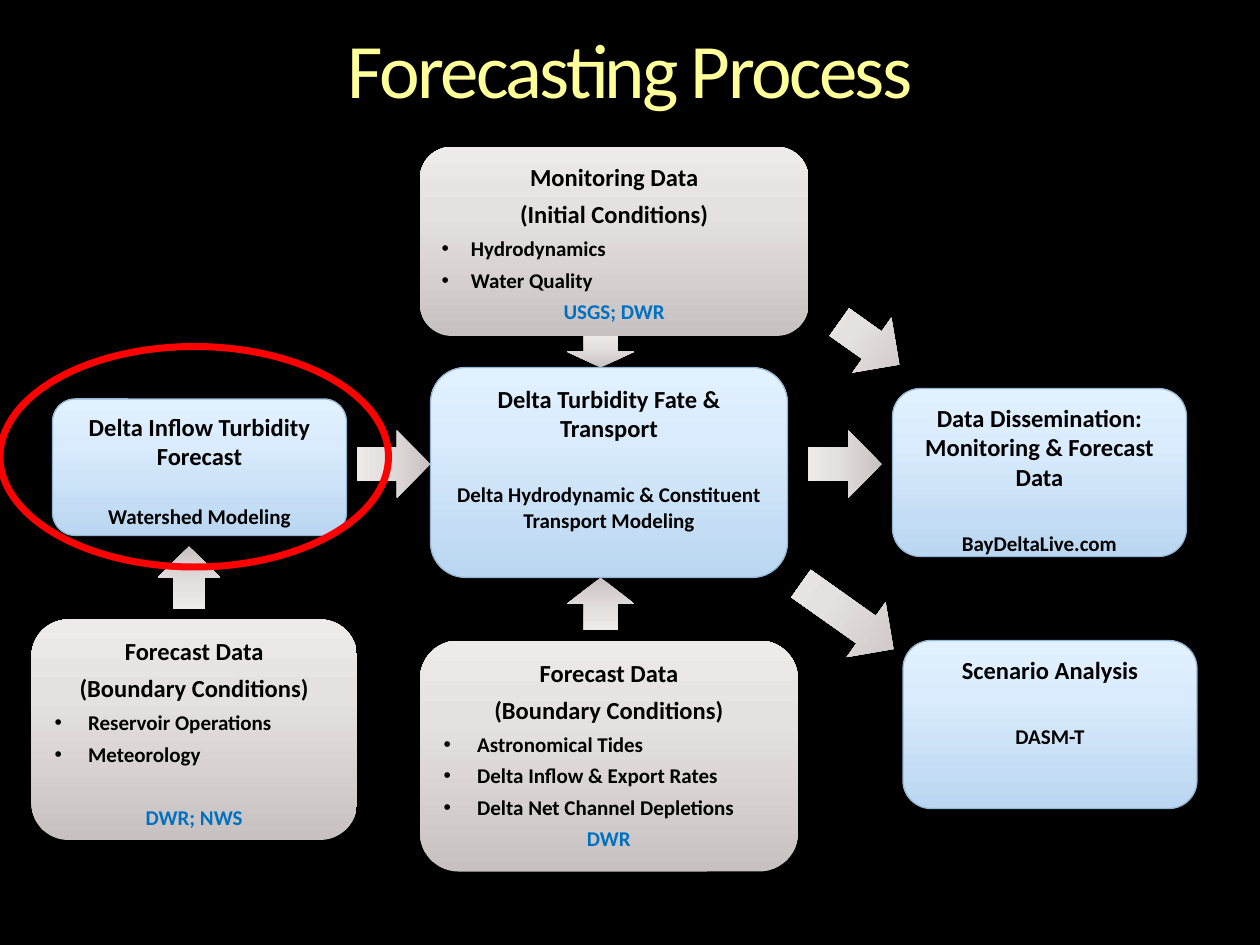
from copy import deepcopy

from pptx import Presentation
from pptx.dml.color import RGBColor
from pptx.enum.shapes import MSO_SHAPE
from pptx.enum.text import MSO_ANCHOR, PP_ALIGN
from pptx.oxml.ns import qn
from pptx.util import Pt
from lxml import etree

PX = 7620  # EMU; 120 px to the inch
ROUNDED, DOWN_ARROW, OVAL = (
    MSO_SHAPE.ROUNDED_RECTANGLE, MSO_SHAPE.DOWN_ARROW, MSO_SHAPE.OVAL)
LEFT, CENTER = PP_ALIGN.LEFT, PP_ALIGN.CENTER
TOP = MSO_ANCHOR.TOP

FONT = "Calibri"
BLACK = RGBColor(0x00, 0x00, 0x00)
YELLOW = RGBColor(0xFF, 0xFF, 0x99)
AGENCY_BLUE = RGBColor(0x00, 0x70, 0xC0)
EDGE_BLUE = RGBColor(0x94, 0xB6, 0xD2)
RED = RGBColor(0xFF, 0x00, 0x00)
GRAY_STOPS = (RGBColor(0xC8, 0xC1, 0xC1), RGBColor(0xE6, 0xE1, 0xE1),
              RGBColor(0xED, 0xEA, 0xEA))
BLUE_STOPS = (RGBColor(0xBA, 0xD6, 0xF1), RGBColor(0xD9, 0xEB, 0xFC),
              RGBColor(0xE2, 0xF1, 0xFF))
STOP_POSITIONS = (0, 0.65, 1)

HEAD, BODY = 14, 12      # text sizes in points
SPACE_AFTER = 0.3        # share of the text size
LINE_GAP = 14.6          # one body line, in points
PARAGRAPH_GAP = 18.2     # one body line with its space after


def emu(box):
    return [length * PX for length in box]


def add_text(frame, text, size=BODY, color=BLACK, bold=True, align=CENTER,
             before=0, after=SPACE_AFTER, indent=0, spacing=None, line=None):
    """Fill the first paragraph while it is empty, else add one."""
    paragraph = frame.paragraphs[0]
    if paragraph.runs:
        paragraph = frame.add_paragraph()
    if indent:
        properties = paragraph._p.get_or_add_pPr()
        properties.set("marL", str(indent * PX))
        properties.set("indent", str(-indent * PX))
        etree.SubElement(properties, qn("a:buFont")).set("typeface", "Arial")
        etree.SubElement(properties, qn("a:buChar")).set("char", "•")
    paragraph.alignment = align
    if before:
        paragraph.space_before = Pt(before)
    paragraph.space_after = Pt(size * after)
    if line:
        paragraph.line_spacing = line
    run = paragraph.add_run()
    run.text = text
    run.font.name, run.font.size, run.font.bold = FONT, Pt(size), bold
    run.font.color.rgb = color
    if spacing:
        run._r.get_or_add_rPr().set("spc", str(spacing))


def add_gradient_shape(slide, preset, box, stops):
    shape = slide.shapes.add_shape(preset, *emu(box))
    shape.shadow.inherit = False
    shape.line.fill.background()
    shape.fill.gradient()
    shape.fill.gradient_angle = 90
    stop_list = shape._element.spPr.find(".//" + qn("a:gsLst"))
    stop_list.append(deepcopy(stop_list[0]))
    for stop, position, color in zip(shape.fill.gradient_stops,
                                     STOP_POSITIONS, stops):
        stop.position = position
        stop.color.rgb = color
    shape.text_frame.word_wrap = True
    shape.text_frame.vertical_anchor = TOP
    return shape


def add_title(slide, box, text):
    frame = slide.shapes.add_textbox(*emu(box)).text_frame
    frame.word_wrap = True
    frame.margin_left = frame.margin_right = 0
    frame.margin_top = frame.margin_bottom = 0
    add_text(frame, text, size=44, color=YELLOW, bold=False, after=0,
             spacing=-150, line=0.9)


def add_data_box(slide, box, headings, items, agencies, indent, gap=0):
    """Gray box: headings, bulleted inputs and the supplying agencies."""
    frame = add_gradient_shape(slide, ROUNDED, box, GRAY_STOPS).text_frame
    for heading in headings:
        add_text(frame, heading, size=HEAD)
    for item in items:
        add_text(frame, item, align=LEFT, indent=indent)
    add_text(frame, agencies, color=AGENCY_BLUE, before=gap)


def add_model_box(slide, box, heading, tool, gap=PARAGRAPH_GAP):
    """Blue box: a forecast step and the tool that serves it."""
    shape = add_gradient_shape(slide, ROUNDED, box, BLUE_STOPS)
    shape.line.color.rgb = EDGE_BLUE
    shape.line.width = Pt(0.75)
    add_text(shape.text_frame, heading, size=HEAD)
    add_text(shape.text_frame, tool, before=gap)


def add_arrow(slide, box, rotation):
    add_gradient_shape(slide, DOWN_ARROW, box, GRAY_STOPS).rotation = rotation


def add_highlight(slide, box):
    ring = slide.shapes.add_shape(OVAL, *emu(box))
    ring.shadow.inherit = False
    ring.fill.background()
    ring.line.color.rgb = RED
    ring.line.width = Pt(4)


def main():
    prs = Presentation()
    prs.slide_width, prs.slide_height = emu((1200, 900))
    slide = prs.slides.add_slide(prs.slide_layouts[6])
    slide.background.fill.solid()
    slide.background.fill.fore_color.rgb = BLACK

    add_title(slide, (0, 30, 1200, 80), "Forecasting Process")

    # Input data
    boundary = ("Forecast Data", "(Boundary Conditions)")
    add_data_box(slide, (400, 140, 370, 180),
                 ("Monitoring Data", "(Initial Conditions)"),
                 ("Hydrodynamics", "Water Quality"), "USGS; DWR", indent=28)
    add_data_box(slide, (400, 610, 360, 220), boundary,
                 ("Astronomical Tides", "Delta Inflow & Export Rates",
                  "Delta Net Channel Depletions"), "DWR", indent=32)
    add_data_box(slide, (30, 590, 310, 210), boundary,
                 ("Reservoir Operations", "Meteorology"), "DWR; NWS",
                 indent=32, gap=PARAGRAPH_GAP)

    # Models and products
    add_model_box(slide, (50, 380, 280, 130),
                  "Delta Inflow Turbidity Forecast", "Watershed Modeling",
                  gap=LINE_GAP)
    add_model_box(slide, (410, 350, 340, 200),
                  "Delta Turbidity Fate & Transport",
                  "Delta Hydrodynamic & Constituent Transport Modeling")
    add_model_box(slide, (850, 370, 280, 160),
                  "Data Dissemination: Monitoring & Forecast Data",
                  "BayDeltaLive.com")
    add_model_box(slide, (860, 610, 280, 160), "Scenario Analysis", "DASM-T")

    # Flow between the boxes
    for box, rotation in (
        ((540, 320, 64, 30), 0),
        ((540, 550, 64, 50), 180),
        ((150, 520, 60, 60), 180),
        ((343, 407, 64, 70), 270),
        ((773, 407, 64, 70), 270),
        ((796, 292, 64, 70), 305.3),
        ((775, 533, 64, 108), 305.3),
    ):
        add_arrow(slide, box, rotation)

    # Step in focus
    add_highlight(slide, (0, 330, 370, 210))

    prs.save("out.pptx")


if __name__ == "__main__":
    main()
